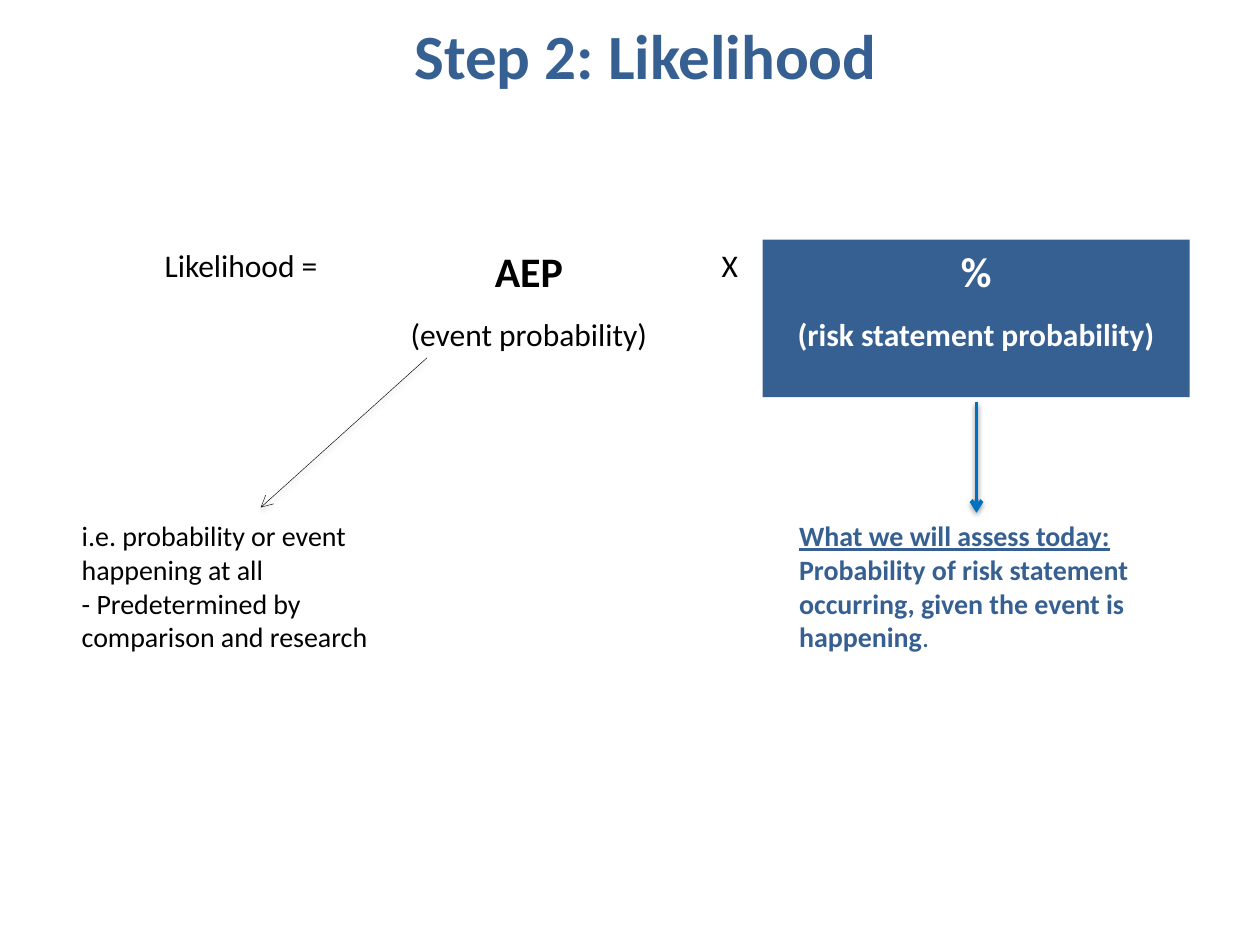
import dataclasses

import lxml.etree
import pptx
import pptx.dml.color
import pptx.enum.shapes
import pptx.enum.text
import pptx.oxml.ns
import pptx.util

Pt = pptx.util.Pt
ALIGN = pptx.enum.text.PP_ALIGN
ANCHOR = pptx.enum.text.MSO_ANCHOR


@dataclasses.dataclass(frozen=True)
class Theme:
    font: str = "Calibri"
    black: str = "000000"
    white: str = "FFFFFF"
    navy: str = "376092"
    blue: str = "0070C0"
    title: int = 36
    factor: int = 24
    label: int = 18
    note: int = 16


THEME = Theme()


def rgb(value):
    return pptx.dml.color.RGBColor.from_string(value)


def add_run(paragraph, text, size, color=THEME.black, bold=False, underline=False):
    run = paragraph.add_run()
    run.text = text
    font = run.font
    font.name, font.size = THEME.font, Pt(size)
    font.bold, font.underline = bold, underline
    font.color.rgb = rgb(color)


def write_text(shape, paragraphs, align=ALIGN.LEFT, anchor=ANCHOR.TOP, spacing=()):
    """Each paragraph is a list of (text, format) runs; spacing maps to paragraphs."""
    frame = shape.text_frame
    frame.word_wrap = True
    frame.vertical_anchor = anchor
    for index, runs in enumerate(paragraphs):
        paragraph = frame.add_paragraph() if index else frame.paragraphs[0]
        paragraph.alignment = align
        if index < len(spacing):
            paragraph.line_spacing = spacing[index]
        for text, style in runs:
            add_run(paragraph, text, **style)


def add_text(slide, box, paragraphs, **layout):
    shape = slide.shapes.add_textbox(*map(Pt, box))
    write_text(shape, paragraphs, **layout)
    return shape


def add_panel(slide, box, fill):
    kind = pptx.enum.shapes.MSO_SHAPE.RECTANGLE
    shape = slide.shapes.add_shape(kind, *map(Pt, box))
    shape.shadow.inherit = False
    shape.fill.solid()
    shape.fill.fore_color.rgb = rgb(fill)
    shape.line.fill.background()
    return shape


def add_arrow(slide, start, end, color, width):
    kind = pptx.enum.shapes.MSO_CONNECTOR.STRAIGHT
    arrow = slide.shapes.add_connector(kind, *map(Pt, start + end))
    arrow.line.color.rgb = rgb(color)
    arrow.line.width = Pt(width)
    qn = pptx.oxml.ns.qn
    line = arrow.line._get_or_add_ln()
    lxml.etree.SubElement(line, qn("a:tailEnd"), type="arrow")
    # Soft shadow straight below the line
    effects = lxml.etree.SubElement(arrow._element.spPr, qn("a:effectLst"))
    shadow = lxml.etree.SubElement(
        effects, qn("a:outerShdw"), blurRad=str(Pt(3.1)), dist=str(Pt(1.6)),
        dir="5400000", rotWithShape="0")
    tint = lxml.etree.SubElement(shadow, qn("a:srgbClr"), val=THEME.black)
    lxml.etree.SubElement(tint, qn("a:alpha"), val="38000")
    return arrow


def main():
    presentation = pptx.Presentation()
    presentation.slide_width, presentation.slide_height = Pt(720), Pt(540)
    slide = presentation.slides.add_slide(presentation.slide_layouts[6])

    label = dict(size=THEME.label)
    note = dict(size=THEME.note)
    factor = dict(size=THEME.factor, bold=True)
    navy_note = dict(note, color=THEME.navy, bold=True)
    white_bold = dict(color=THEME.white, bold=True)
    factor_layout = dict(align=ALIGN.CENTER, spacing=(1.0, 1.5))

    # Title
    add_text(slide, (18, 0, 702, 62.5),
             [[("Step 2: Likelihood", dict(size=THEME.title, color=THEME.navy, bold=True))]],
             align=ALIGN.CENTER, anchor=ANCHOR.MIDDLE)

    # Formula row
    row_top, row_height = 137, 90
    add_text(slide, (87, row_top, 122, 38), [[("Likelihood =", label)]])
    add_text(slide, (218, row_top, 168.5, row_height),
             [[("AEP", factor)], [("(event probability)", label)]], **factor_layout)
    panel = add_panel(slide, (435.8, row_top, 244, row_height), THEME.navy)
    write_text(panel,
               [[("%", dict(factor, **white_bold))],
                [("(risk statement probability)", dict(label, **white_bold))]],
               **factor_layout)
    add_text(slide, (405.2, row_top, 37, 38), [[("X", label)]])

    # Explanations
    note_top, note_height = 293, 85
    add_text(slide, (39.6, note_top, 186.5, note_height),
             [[("i.e. probability or event happening at all", note)],
              [("- Predetermined by comparison and research", note)]])
    today = add_text(
        slide, (449.6, note_top, 216.8, note_height),
        [[("What we will assess today: ", dict(navy_note, underline=True)),
          ("Probability of risk statement occurring, given the event is happening", navy_note),
          (".", dict(navy_note, bold=False))]])

    # Arrows from each factor to its explanation
    center = 558
    down = add_arrow(slide, (center, 229.7), (center, note_top), THEME.blue, 2.25)
    down.end_connect(today, 0)
    add_arrow(slide, (244, 204.5), (149, 290), THEME.black, 0.25)

    presentation.save("out.pptx")


if __name__ == "__main__":
    main()
